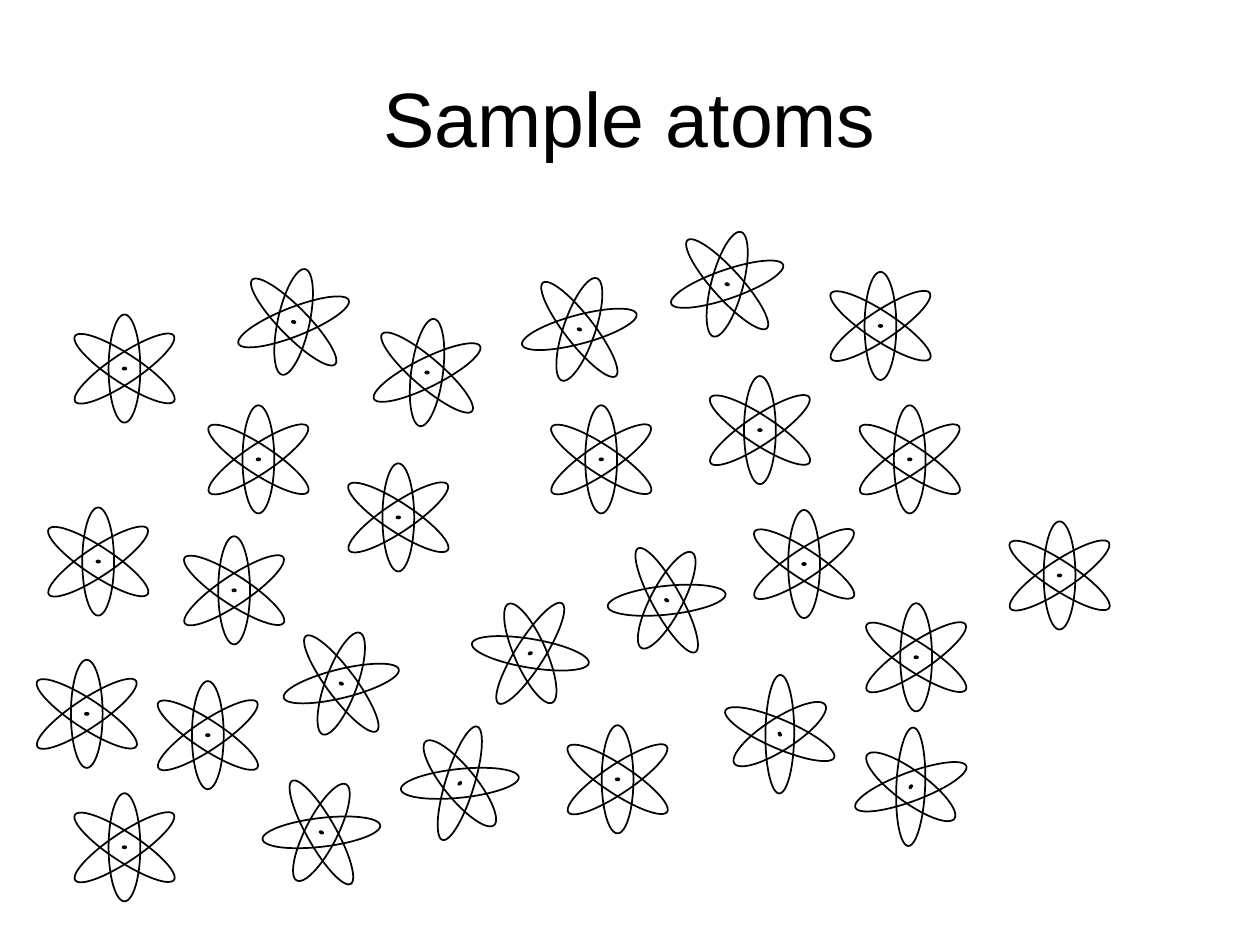
import pptx
import pptx.dml.color
import pptx.enum.shapes
import pptx.enum.text
import pptx.util

Cm = pptx.util.Cm
Pt = pptx.util.Pt

COLORS = {"ink": "000000", "paper": "FFFFFF"}
UPRIGHT_ORBIT = (2.18, 0.64)
SLANTED_ORBIT = (2.39, 0.58)
NUCLEUS = (0.05, 0.08)

ATOMS = [
    (1.98, 11.32, 0), (12.12, 9.26, 0), (4.72, 11.9, 0),
    (13.44, 12.1, 27.8), (8.03, 10.43, 0), (21.36, 11.6, 0),
    (6.88, 13.78, 20), (10.69, 13.17, -23.8), (18.34, 9.26, 0),
    (18.47, 13.25, 0), (15.32, 8.67, 0), (5.21, 9.26, 0),
    (15.72, 14.8, 57.2), (9.27, 15.79, -39.2), (12.45, 15.71, 0),
    (8.61, 7.51, 7.4), (16.21, 11.37, 0), (6.48, 16.78, 27.1),
    (4.19, 14.82, 0), (17.75, 6.57, 0), (14.66, 5.73, 14.7),
    (11.68, 6.64, 18.8), (5.92, 6.49, 12.3), (18.36, 15.86, -53.8),
    (1.75, 14.39, 0), (2.51, 17.08, 0), (2.51, 7.43, 0),
]


class SlideBuilder:
    font = "Arial"
    title_size = 44
    orbit_line = 1
    nucleus_line = 0.75

    def __init__(self, slide):
        self.s = slide
        fill = slide.background.fill
        fill.solid()
        fill.fore_color.rgb = self.color("paper")

    def color(self, name):
        return pptx.dml.color.RGBColor.from_string(COLORS[name])

    def title(self, text, x, y, w, h):
        tf = self.s.shapes.add_textbox(Cm(x), Cm(y), Cm(w), Cm(h)).text_frame
        tf.word_wrap = True
        tf.vertical_anchor = pptx.enum.text.MSO_ANCHOR.MIDDLE
        tf.text = text
        p = tf.paragraphs[0]
        p.alignment = pptx.enum.text.PP_ALIGN.CENTER
        r = p.runs[0]
        r.font.name = self.font
        r.font.size = Pt(self.title_size)
        r.font.color.rgb = self.color("ink")

    def ellipse(self, group, x, y, size, angle, line, fill=None):
        w, h = size
        sp = group.shapes.add_shape(
            pptx.enum.shapes.MSO_SHAPE.OVAL,
            Cm(x - w / 2), Cm(y - h / 2), Cm(w), Cm(h))
        sp.rotation = angle % 360
        sp.shadow.inherit = False
        if fill:
            sp.fill.solid()
            sp.fill.fore_color.rgb = self.color(fill)
        else:
            sp.fill.background()
        sp.line.color.rgb = self.color("ink")
        sp.line.width = Pt(line)

    def atom(self, x, y, turn):
        group = self.s.shapes.add_group_shape()
        self.ellipse(group, x, y, UPRIGHT_ORBIT, 270 + turn, self.orbit_line)
        self.ellipse(group, x, y, NUCLEUS, 270 + turn, self.nucleus_line, "ink")
        for slant in (213.3, 326.2):
            self.ellipse(group, x, y, SLANTED_ORBIT, slant + turn, self.orbit_line)


def main():
    prs = pptx.Presentation()
    prs.slide_width = Cm(25.4)
    prs.slide_height = Cm(19.05)
    builder = SlideBuilder(prs.slides.add_slide(prs.slide_layouts[6]))
    builder.title("Sample atoms", 1.27, 0.76, 22.86, 3.18)
    for x, y, turn in ATOMS:
        builder.atom(x, y, turn)
    prs.save("out.pptx")


if __name__ == "__main__":
    main()
